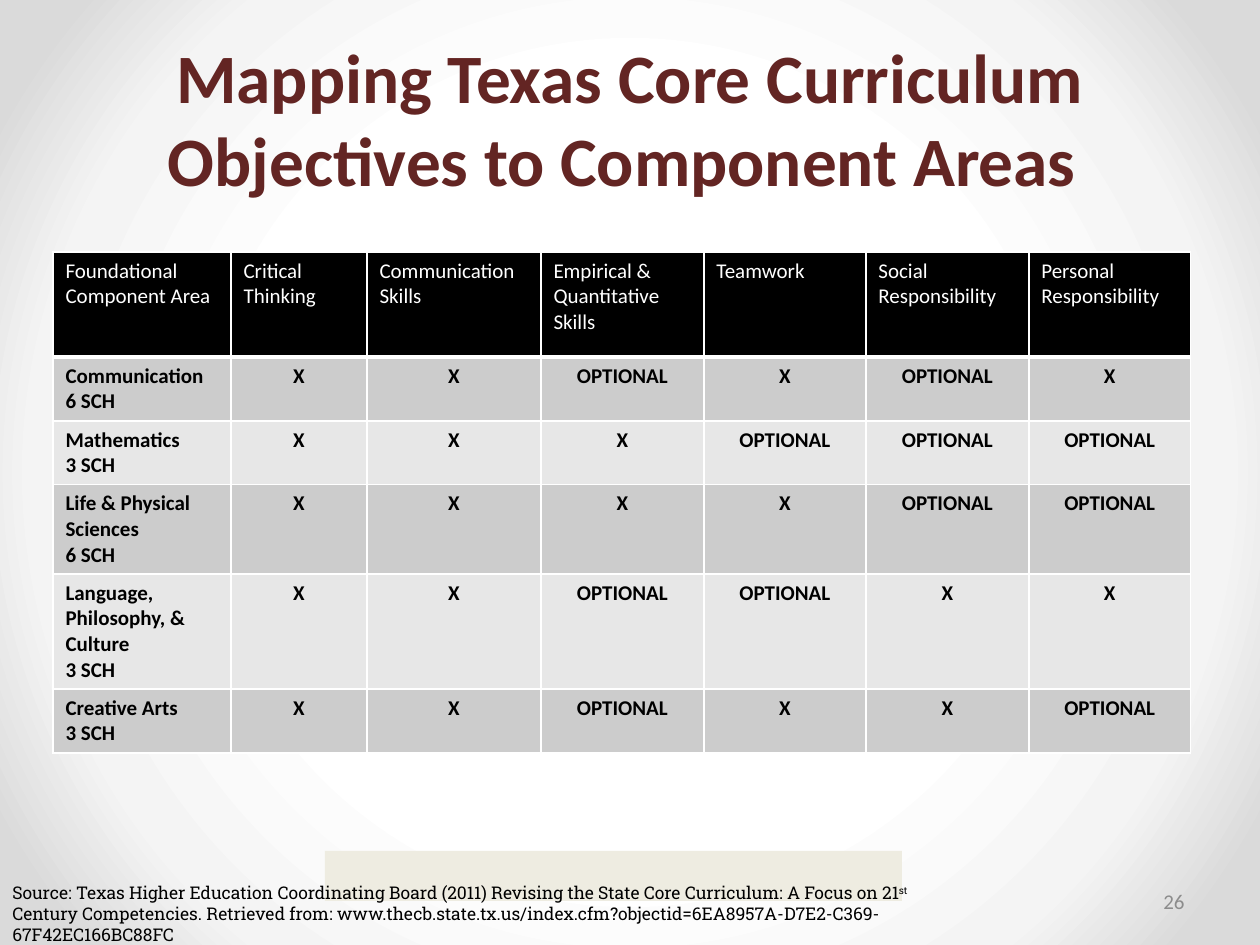
from pptx import Presentation
from pptx import util as u
from pptx.dml.color import RGBColor
from pptx.enum import shapes, text
from pptx.oxml import parse_xml
from pptx.oxml.ns import nsdecls, qn

PX = 914400 / 126
COLORS = {
    "maroon": "632523", "black": "000000", "white": "FFFFFF", "gray": "8C8C8C",
    "dark_band": "CCCCCC", "light_band": "E7E7E7", "cream": "EEECE1",
}
BACKDROP_STOPS = {50: "FFFFFF", 76: "F4F4F4", 92: "DADADA"}
TITLE = {"name": "Calibri", "size": u.Pt(39.6), "bold": True}
HEADING = {"name": "Calibri", "size": u.Pt(12), "bold": False}
ENTRY = {"name": "Calibri", "size": u.Pt(12), "bold": True}
PAGE = {"name": "Calibri", "size": u.Pt(12)}
CITATION = {"name": "Roboto Slab", "size": u.Pt(10)}

OBJECTIVES = [
    "Foundational Component Area", "Critical Thinking", "Communication Skills",
    "Empirical & Quantitative Skills", "Teamwork", "Social Responsibility",
    "Personal Responsibility",
]
AREAS = [
    ("Communication", 6, "XXOXOX"),
    ("Mathematics", 3, "XXXOOO"),
    ("Life & Physical Sciences", 6, "XXXXOO"),
    ("Language, Philosophy, & Culture", 3, "XXOOXX"),
    ("Creative Arts", 3, "XXOXXO"),
]
MARKS = {"X": "X", "O": "OPTIONAL"}
COLUMN_WIDTHS = [178, 136, 174, 163, 162, 163, 162]
HEADER_HEIGHT, AREA_HEIGHT = 105, 58


def px(*lengths):
    """Convert pixel lengths to EMU."""
    return [u.Emu(round(length * PX)) for length in lengths]


def rgb(color):
    """Look up a named colour."""
    return RGBColor.from_string(COLORS[color])


def style(font, formats, color):
    """Apply format values and a colour to a font."""
    for attribute, value in formats.items():
        setattr(font, attribute, value)
    font.color.rgb = rgb(color)


def write(frame, wording, formats, color, align):
    """Fill a text frame, one paragraph a line, in one format."""
    frame.text = wording
    for paragraph in frame.paragraphs:
        paragraph.alignment = align
        for run in paragraph.runs:
            style(run.font, formats, color)


def paint_backdrop(slide):
    """Give the slide a circular gradient background."""
    slide.background.fill.solid()
    solid = slide.element.find(".//" + qn("p:bgPr")).find(qn("a:solidFill"))
    stops = "".join(
        f'<a:gs pos="{position * 1000}"><a:srgbClr val="{color}"/></a:gs>'
        for position, color in BACKDROP_STOPS.items()
    )
    solid.getparent().replace(solid, parse_xml(
        f'<a:gradFill {nsdecls("a")} rotWithShape="1"><a:gsLst>{stops}</a:gsLst>'
        '<a:path path="circle"><a:fillToRect l="50000" t="50000" r="50000" b="50000"/>'
        "</a:path></a:gradFill>"
    ))


def add_title(slide, wording):
    """Place and format the slide title."""
    title = slide.shapes.title
    title.left, title.top, title.width, title.height = px(63, 38, 1134, 158)
    title.text_frame.vertical_anchor = text.MSO_ANCHOR.MIDDLE
    write(title.text_frame, wording, TITLE, "maroon", text.PP_ALIGN.CENTER)


def format_cell(cell, fill, bottom=1):
    """Draw white borders around a cell and fill it."""
    for side, points in {"L": 1, "R": 1, "T": 1, "B": bottom}.items():
        cell._tc.get_or_add_tcPr().append(parse_xml(
            f'<a:ln{side} {nsdecls("a")} w="{u.Pt(points)}"><a:solidFill>'
            f'<a:srgbClr val="{COLORS["white"]}"/></a:solidFill></a:ln{side}>'
        ))
    cell.fill.solid()
    cell.fill.fore_color.rgb = rgb(fill)


def add_objectives_table(slide):
    """Map each component area to its objectives."""
    heights = [HEADER_HEIGHT] + [AREA_HEIGHT] * len(AREAS)
    grid = slide.shapes.add_table(
        len(heights), len(OBJECTIVES),
        *px(53, 252, sum(COLUMN_WIDTHS), sum(heights)),
    ).table
    for column, width in zip(grid.columns, px(*COLUMN_WIDTHS)):
        column.width = width
    for row, height in zip(grid.rows, px(*heights)):
        row.height = height
    for cell, objective in zip(grid.rows[0].cells, OBJECTIVES):
        write(cell.text_frame, objective, HEADING, "white", text.PP_ALIGN.LEFT)
        format_cell(cell, "black", bottom=3)
    for index, (area, hours, marks) in enumerate(AREAS):
        entries = [f"{area}\n{hours} SCH"] + [MARKS[mark] for mark in marks]
        band = "light_band" if index % 2 else "dark_band"
        for column, entry in enumerate(entries):
            cell = grid.cell(index + 1, column)
            align = text.PP_ALIGN.CENTER if column else text.PP_ALIGN.LEFT
            write(cell.text_frame, entry, ENTRY, "black", align)
            format_cell(cell, band)


def add_footer_band(slide):
    """Add the plain cream band near the bottom."""
    band = slide.shapes.add_shape(
        shapes.MSO_SHAPE.RECTANGLE, *px(325, 851, 577, 50))
    band.shadow.inherit = False
    band.fill.solid()
    band.fill.fore_color.rgb = rgb("cream")
    band.line.fill.background()


def add_page_number(slide, number):
    """Add the right-aligned page number."""
    frame = slide.shapes.add_textbox(*px(903, 876, 294, 50)).text_frame
    frame.word_wrap = True
    frame.vertical_anchor = text.MSO_ANCHOR.MIDDLE
    write(frame, number, PAGE, "gray", text.PP_ALIGN.RIGHT)


def add_source(slide, before, raised, after):
    """Add the source line with its raised ordinal."""
    frame = slide.shapes.add_textbox(*px(0, 876, 982, 118)).text_frame
    frame.word_wrap = True
    frame.auto_size = text.MSO_AUTO_SIZE.SHAPE_TO_FIT_TEXT
    for wording in (before, raised, after):
        run = frame.paragraphs[0].add_run()
        run.text = wording
        style(run.font, CITATION, "black")
        if wording == raised:
            run.font._element.set("baseline", "30000")


def main():
    """Build and save the slide."""
    deck = Presentation()
    deck.slide_width, deck.slide_height = px(1260, 945)
    slide = deck.slides.add_slide(deck.slide_layouts.get_by_name("Title Only"))
    paint_backdrop(slide)
    add_title(slide, "Mapping Texas Core Curriculum Objectives to Component Areas ")
    add_objectives_table(slide)
    add_footer_band(slide)
    add_page_number(slide, "26")
    add_source(
        slide,
        "Source: Texas Higher Education Coordinating Board (2011) Revising the "
        "State Core Curriculum: A Focus on 21",
        "st",
        " Century Competencies. Retrieved from: www.thecb.state.tx.us/index.cfm"
        "?objectid=6EA8957A-D7E2-C369-67F42EC166BC88FC",
    )
    deck.save("out.pptx")


if __name__ == "__main__":
    main()
